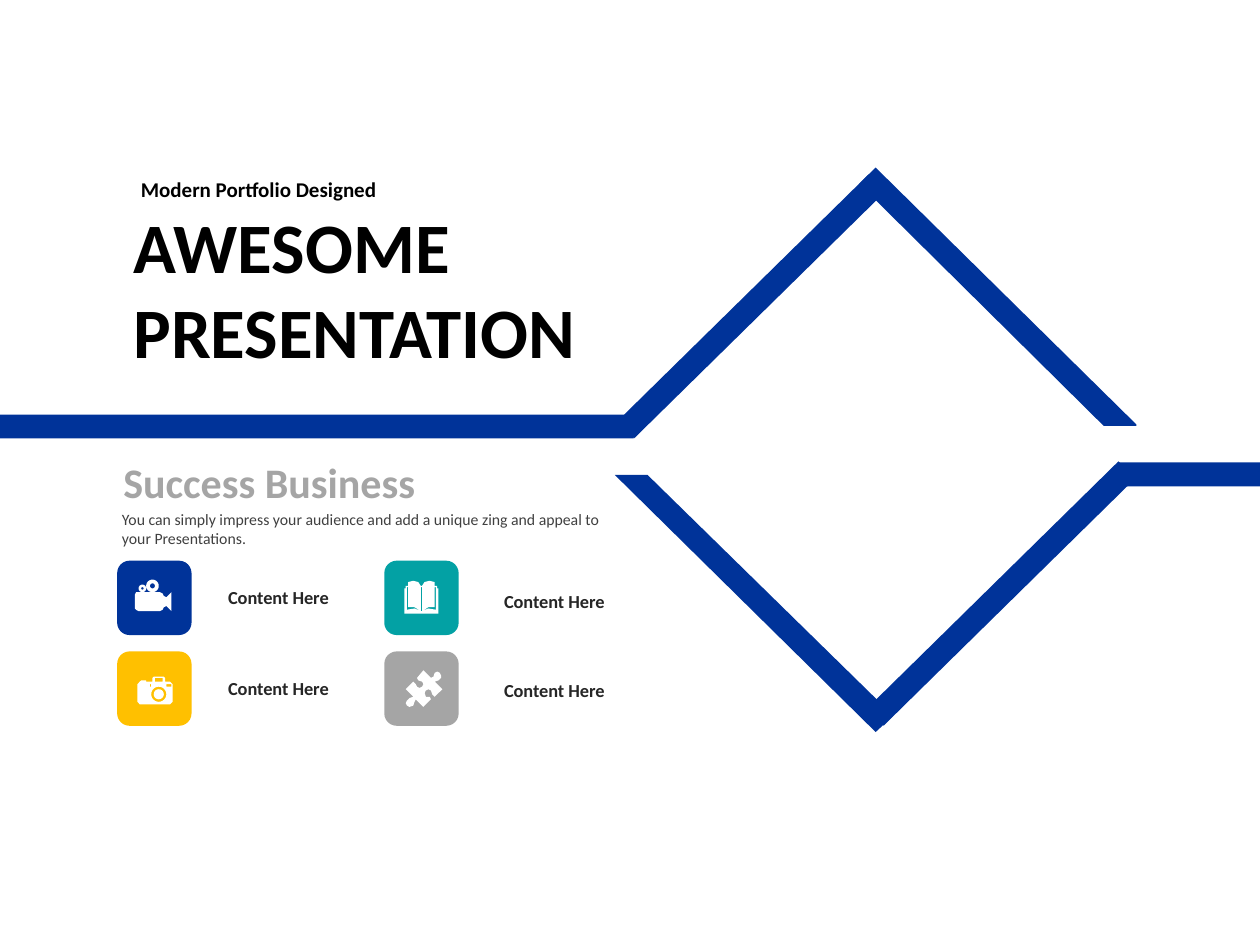
import math
from pptx import Presentation, util as u
from pptx.dml.color import RGBColor
from pptx.enum import shapes, text

PX = u.Inches(1) // 100  # 100 px to the inch
BLUE, TEAL, GOLD, GREY, WHITE = "003399", "03A1A4", "FFC000", "A5A5A5", "FFFFFF"


def paint(s, color):
    s.shadow.inherit = False
    s.fill.solid()
    s.fill.fore_color.rgb = RGBColor.from_string(color)
    s.line.fill.background()


def add_text(words, x, y, w, h, size, color="000000", bold=True,
             align=text.PP_ALIGN.LEFT, anchor=text.MSO_ANCHOR.MIDDLE):
    tf = slide.shapes.add_textbox(x * PX, y * PX, w * PX, h * PX).text_frame
    tf.word_wrap = True
    tf.vertical_anchor = anchor
    for i, line in enumerate(words.split("\n")):
        p = tf.paragraphs[0] if i == 0 else tf.add_paragraph()
        p.alignment = align
        r = p.add_run()
        r.text = line
        r.font.name = "Calibri"
        r.font.size = u.Pt(size)
        r.font.bold = bold
        r.font.color.rgb = RGBColor.from_string(color)


prs = Presentation()
prs.slide_width, prs.slide_height = 1000 * PX, 750 * PX
slide = prs.slides.add_slide(prs.slide_layouts[6])

# Ribbon bars: x, y, width, height, rotation
for x, y, w, h, angle in [
    (0, 329, 503, 19, 0),
    (587, 103, 19, 280, 45.5),
    (887, 367, 113, 19, 180),
    (785, 331, 19, 280, 225.5),
]:
    s = slide.shapes.add_shape(shapes.MSO_SHAPE.RECTANGLE, x * PX, y * PX, w * PX, h * PX)
    s.rotation = angle
    paint(s, BLUE)

# Icon tiles and their labels: x, y, colour, label x, label y
for x, y, color, label_x, label_y in [
    (93, 445, BLUE, 157, 460),
    (93, 517, GOLD, 157, 532),
    (305, 445, TEAL, 376, 463),
    (305, 517, GREY, 376, 534),
]:
    s = slide.shapes.add_shape(shapes.MSO_SHAPE.ROUNDED_RECTANGLE,
                               x * PX, y * PX, 59 * PX, 59 * PX)
    paint(s, color)
    add_text("Content Here", label_x, label_y, 128, 28, 10.5, "262626",
             align=text.PP_ALIGN.CENTER)

# Outlines are lists of contours: a polygon is a list, a circle a tuple (x, y, radius)
ribbon_right = [[(695, 133), (902, 337), (902, 338), (876, 338), (682, 146)]]
ribbon_left = [[(695, 581), (488, 377), (514, 377), (709, 568)]]
photo_camera = [
    [(109, 543), (111, 541), (112, 540), (116, 540), (116, 541), (121, 541), (121, 538),
     (122, 537), (130, 537), (131, 538), (131, 541), (135, 541), (137, 543), (137, 557),
     (135, 559), (111, 559), (109, 557)],
    [(123, 538), (129, 538), (129, 541), (123, 541)],
    [(119, 543), (120, 543), (120, 545), (119, 545)],
    [(132, 543), (136, 543), (136, 545), (132, 545)],
    (126, 551, 6), (126, 551, 4),
]
film_camera = [
    [(107, 472), (108, 470), (110, 470), (127, 470), (129, 471), (130, 473), (132, 474),
     (136, 470), (136, 485), (132, 481), (130, 482), (129, 484), (127, 485), (110, 485),
     (108, 484), (107, 483)],
    (121, 465, 5), (121, 465, 2), (113, 467, 3), (113, 467, 1),
]
puzzle = [[
    (349, 534), (350, 536), (350, 538), (348, 540), (345, 541), (351, 547), (345, 553),
    (343, 551), (342, 548), (340, 547), (338, 548), (337, 550), (338, 553), (341, 553),
    (342, 555), (336, 561), (330, 555), (329, 557), (328, 560), (325, 561), (323, 560),
    (322, 558), (323, 556), (325, 554), (328, 553), (322, 547), (328, 541), (330, 543),
    (331, 545), (333, 546), (335, 545), (336, 543), (335, 541), (332, 540), (331, 538),
    (336, 532), (342, 538), (344, 537), (345, 534), (347, 533)]]
book = [
    [(321, 487), (321, 467), (322, 467), (322, 465), (324, 465), (324, 462), (328, 461),
     (332, 462), (334, 465), (335, 465), (337, 462), (341, 461), (345, 462), (345, 465),
     (347, 465), (347, 467), (348, 467), (348, 487)],
    [(323, 466), (324, 466), (324, 482), (329, 482), (334, 485), (329, 483), (323, 484)],
    [(346, 466), (345, 466), (345, 482), (340, 482), (335, 485), (340, 483), (346, 484)],
    [(334, 466), (335, 466), (335, 485), (334, 485)],
]
for outline, color in [(ribbon_right, BLUE), (ribbon_left, BLUE), (photo_camera, WHITE),
                       (film_camera, WHITE), (puzzle, WHITE), (book, WHITE)]:
    builder = None
    for contour in outline:
        if isinstance(contour, tuple):
            cx, cy, radius = contour
            turns = [math.tau * i / 24 for i in range(24)]
            contour = [(cx + radius * math.cos(t), cy + radius * math.sin(t)) for t in turns]
        points = [(x * PX, y * PX) for x, y in contour]
        if builder is None:
            builder = slide.shapes.build_freeform(*points[0])
        else:
            builder.move_to(*points[0])
        builder.add_line_segments(points[1:], close=True)
    paint(builder.convert_to_shape(), color)

add_text("Modern Portfolio Designed", 102, 135, 254, 30, 12, anchor=text.MSO_ANCHOR.TOP)
add_text("AWESOME\nPRESENTATION", 96, 155, 552, 146, 40.5)
add_text("Success Business", 88, 365, 419, 35, 24, GREY)
add_text("You can simply impress your audience and add a unique zing and appeal to "
         "your Presentations.", 87, 400, 420, 37, 9, "404040", bold=False,
         anchor=text.MSO_ANCHOR.TOP)

prs.save("out.pptx")
